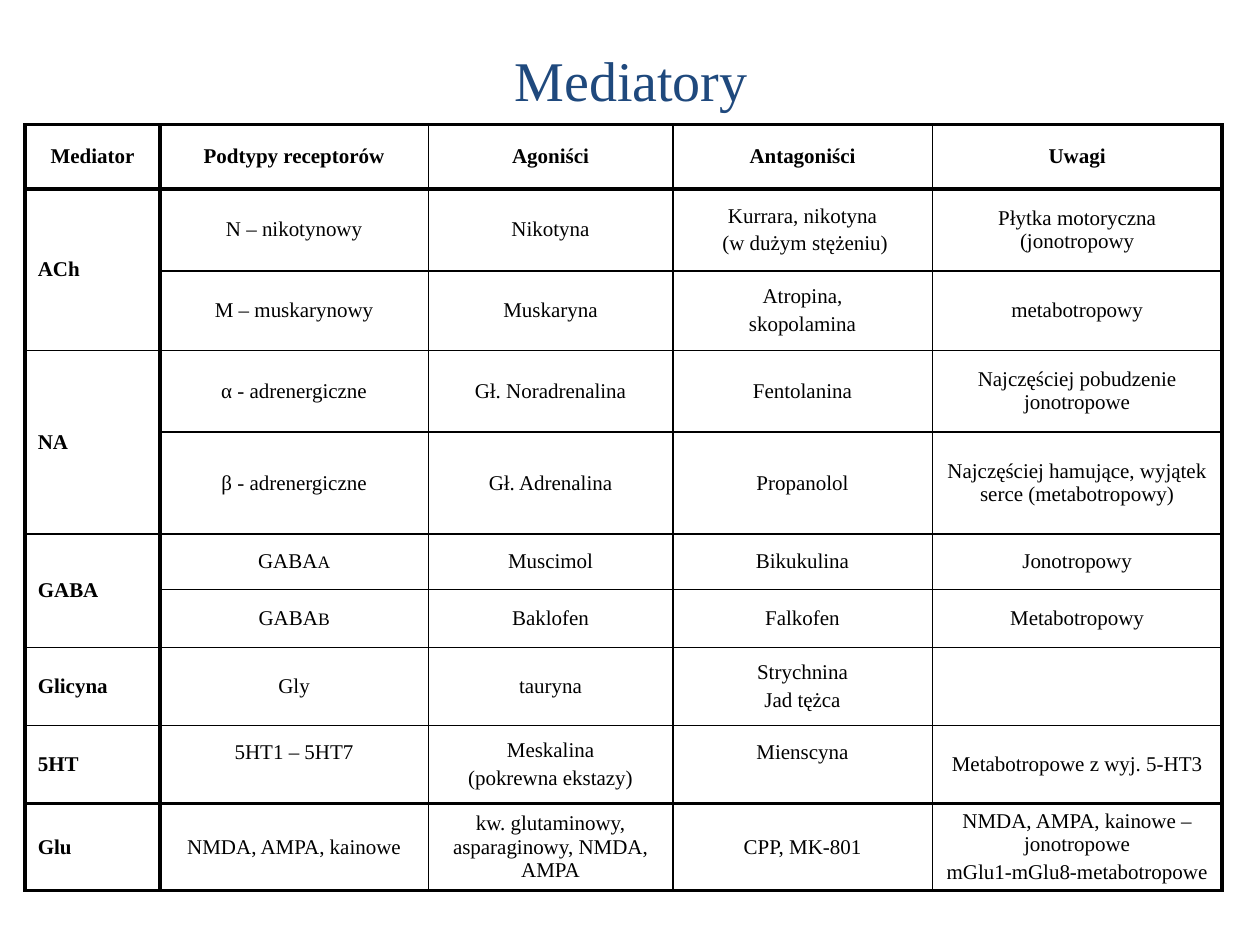
import pptx
import pptx.util
import pptx.dml.color
import pptx.enum.text
import pptx.oxml
import pptx.oxml.ns

Pt = pptx.util.Pt
ALIGN = pptx.enum.text.PP_ALIGN
MIDDLE = pptx.enum.text.MSO_ANCHOR.MIDDLE
FONT = "Times New Roman"
HUES = {"title": "1F497D", "text": "000000", "line": "000000", "fill": "FFFFFF"}

TITLE = "Mediatory"
HEAD = ["Mediator", "Podtypy receptorów", "Agoniści", "Antagoniści", "Uwagi"]
GROUPS = [
    ("ACh", [
        ["N – nikotynowy", "Nikotyna", "Kurrara, nikotyna\n (w dużym stężeniu)",
         "Płytka motoryczna (jonotropowy"],
        ["M – muskarynowy", "Muskaryna", "Atropina,\nskopolamina", "metabotropowy"],
    ]),
    ("NA", [
        ["α - adrenergiczne", "Gł. Noradrenalina", "Fentolanina",
         "Najczęściej pobudzenie jonotropowe"],
        ["β - adrenergiczne", "Gł. Adrenalina", "Propanolol",
         "Najczęściej hamujące, wyjątek serce (metabotropowy)"],
    ]),
    ("GABA", [
        [("GABA", "A"), "Muscimol", "Bikukulina", "Jonotropowy"],
        [("GABA", "B"), "Baklofen", "Falkofen", "Metabotropowy"],
    ]),
    ("Glicyna", [["Gly", "tauryna", "Strychnina\nJad tężca", ""]]),
    ("5HT", [["5HT1 – 5HT7", "Meskalina\n(pokrewna ekstazy)", "Mienscyna",
              "Metabotropowe z wyj. 5-HT3"]]),
    ("Glu", [["NMDA, AMPA, kainowe", "kw. glutaminowy, asparaginowy, NMDA, AMPA",
              "CPP, MK-801",
              "NMDA, AMPA, kainowe – jonotropowe\nmGlu1-mGlu8-metabotropowe"]]),
]
RAISED = {"5HT1 – 5HT7", "Mienscyna"}
WIDTHS = [77, 153.4, 139.7, 148.3, 165.6]
HEIGHTS = [36.7, 46.8, 45.4, 46.8, 58.3, 31.7, 33.1, 44.6, 44.6, 44.6]
THICK_COLS = {0, 1, 5}
THICK_ROWS = {0, 1, 9, 10}


def style(para, size, hue, bold=False):
    para.font.name = FONT
    para.font.size = Pt(size)
    para.font.bold = bold
    para.font.color.rgb = pptx.dml.color.RGBColor.from_string(HUES[hue])


def border(cell, row, col):
    props = cell._tc.get_or_add_tcPr()
    sides = [("L", col in THICK_COLS), ("R", col + 1 in THICK_COLS),
             ("T", row in THICK_ROWS), ("B", row + 1 in THICK_ROWS)]
    for side, thick in sides:
        props.append(pptx.oxml.parse_xml(
            f'<a:ln{side} {pptx.oxml.ns.nsdecls("a")} w="{Pt(2.25 if thick else 1)}">'
            f'<a:solidFill><a:srgbClr val="{HUES["line"]}"/></a:solidFill></a:ln{side}>'))


def write(cell, text, bold, align):
    cell.vertical_anchor = MIDDLE
    if text in RAISED:
        cell.margin_bottom = Pt(17.4)
    lines = [text] if isinstance(text, tuple) else text.split("\n")
    for i, line in enumerate(lines):
        frame = cell.text_frame
        para = frame.add_paragraph() if i else frame.paragraphs[0]
        para.alignment = align
        para.space_before = Pt(2.4)
        style(para, 12, "text", bold)
        if isinstance(line, tuple):
            para.add_run().text = line[0]
            small = para.add_run()
            small.text = line[1]
            small.font.size = Pt(10)
        elif line:
            para.add_run().text = line


def main():
    deck = pptx.Presentation()
    deck.slide_width, deck.slide_height = Pt(720), Pt(540)
    slide = deck.slides.add_slide(deck.slide_layouts[5])

    title = slide.shapes.title
    title.left, title.top, title.width, title.height = Pt(36.7), Pt(0), Pt(648), Pt(90)
    title.text_frame.text = TITLE
    title.text_frame.vertical_anchor = MIDDLE
    para = title.text_frame.paragraphs[0]
    para.alignment = ALIGN.CENTER
    style(para, 32, "title")

    rows = [HEAD]
    spans = []
    for name, group in GROUPS:
        if len(group) > 1:
            spans.append((len(rows), len(rows) + len(group) - 1))
        for i, cells in enumerate(group):
            rows.append([name if i == 0 else ""] + cells)

    table = slide.shapes.add_table(
        len(rows), len(HEAD), Pt(14.4), Pt(71.3), Pt(sum(WIDTHS)), Pt(sum(HEIGHTS))).table
    table.horz_banding = False
    table.first_row = False
    for col, width in zip(table.columns, WIDTHS):
        col.width = Pt(width)
    for row, height in zip(table.rows, HEIGHTS):
        row.height = Pt(height)
    for first, last in spans:
        table.cell(first, 0).merge(table.cell(last, 0))

    for r, texts in enumerate(rows):
        for c, text in enumerate(texts):
            cell = table.cell(r, c)
            border(cell, r, c)
            cell.fill.solid()
            cell.fill.fore_color.rgb = pptx.dml.color.RGBColor.from_string(HUES["fill"])
            align = ALIGN.LEFT if r and c == 0 else ALIGN.CENTER
            write(cell, text, r == 0 or c == 0, align)

    deck.save("out.pptx")


if __name__ == "__main__":
    main()
